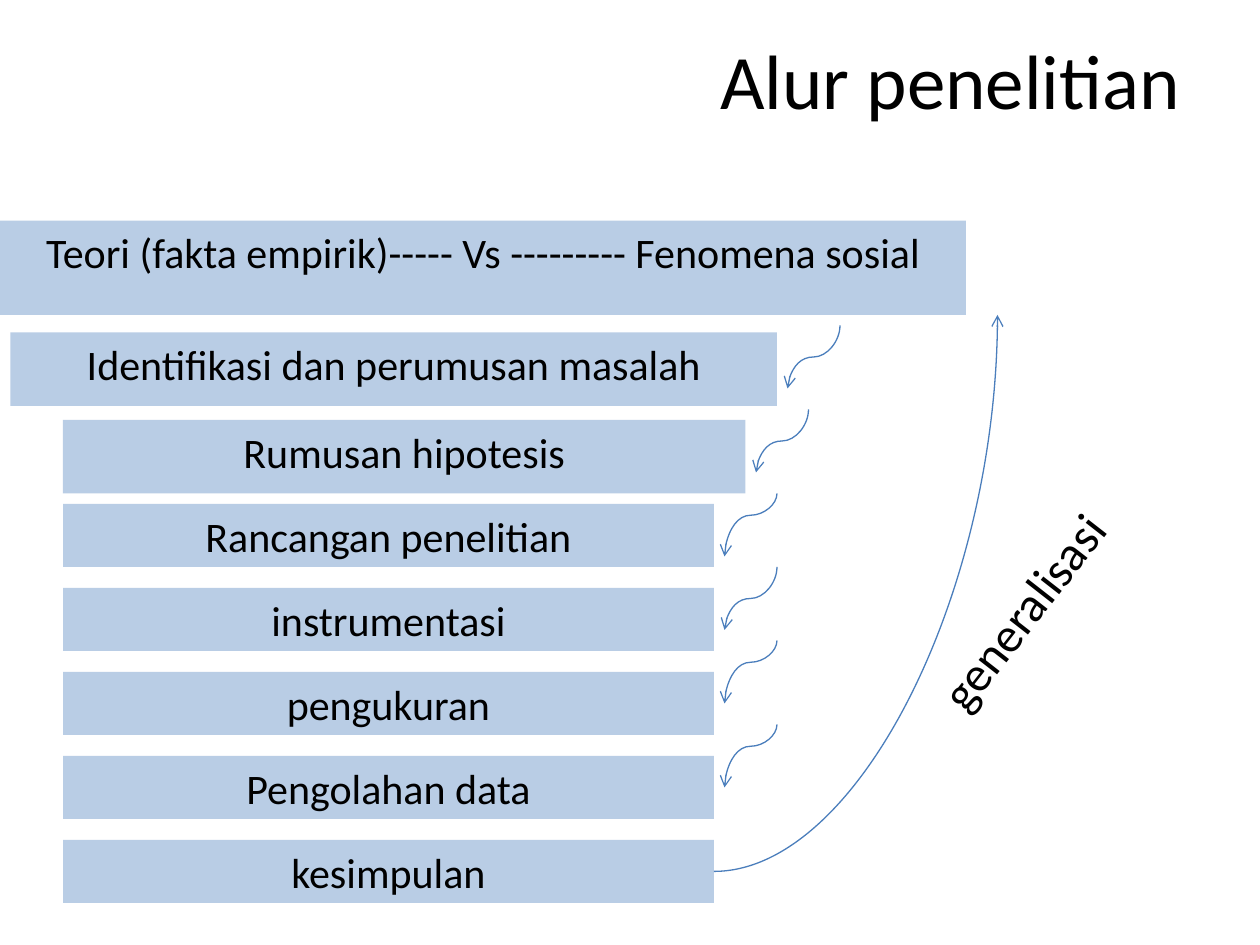
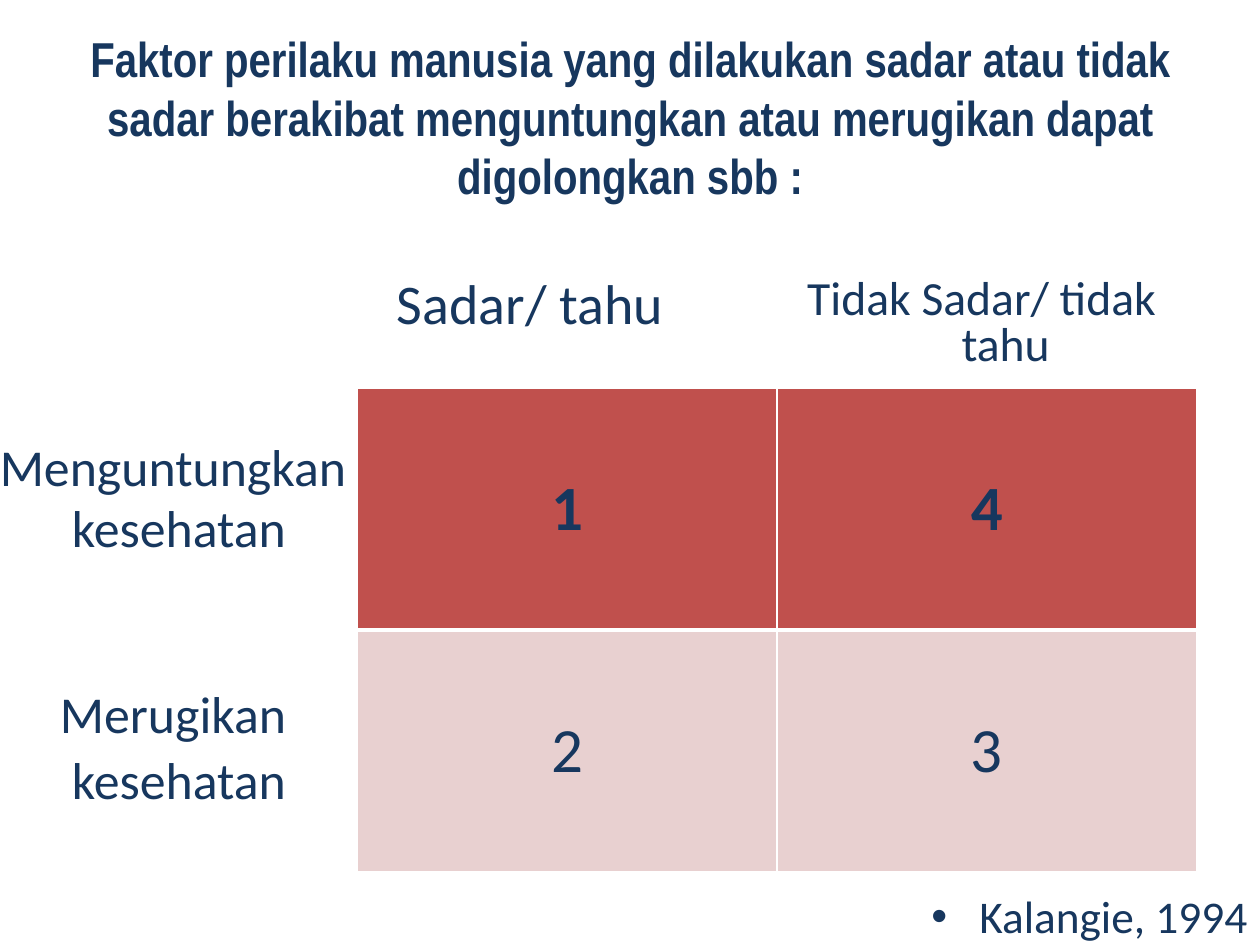
import pptx
import pptx.util
import pptx.dml.color
import pptx.enum.shapes
import pptx.enum.text
import pptx.oxml
from pptx.oxml.ns import qn

WIDE, HIGH = pptx.util.Inches(10), pptx.util.Inches(7.5)
COLS, ROWS = 120, 90
HUES = {
    "ink": "000000",
    "navy": "17375E",
    "pale": "B9CDE5",
    "line": "4B7EBC",
    "red": "C0504D",
    "pink": "E8D0D0",
    "white": "FFFFFF",
}
ALIGN = pptx.enum.text.PP_ALIGN
ANCHOR = pptx.enum.text.MSO_ANCHOR
HANG = pptx.util.Inches(0.38)


def hue(name):
    return pptx.dml.color.RGBColor.from_string(HUES[name])


def span(x, y, w, h):
    return (int(x * WIDE / COLS), int(y * HIGH / ROWS),
            int(w * WIDE / COLS), int(h * HIGH / ROWS))


def inside(box, x, y, w, h):
    return span(box[0] + x, box[1] + y, w, h)


def child(parent, tag, **attrs):
    node = pptx.oxml.xmlchemy.OxmlElement(tag)
    for key, value in attrs.items():
        node.set(key, str(value))
    parent.append(node)
    return node


def style(para, size, color, align=ALIGN.CENTER, font="Calibri", bold=False):
    para.alignment = align
    for run in para.runs:
        run.font.size = pptx.util.Pt(size)
        run.font.name = font
        run.font.bold = bold
        run.font.color.rgb = hue(color)


def write(shape, text, size, color, align=ALIGN.CENTER, lead=None, dot=False):
    frame = shape.text_frame
    frame.word_wrap = True
    frame.vertical_anchor = ANCHOR.TOP
    frame.text = text
    for para in frame.paragraphs:
        style(para, size, color, align)
        para.line_spacing = lead
        props = para._p.get_or_add_pPr()
        props.set("marL", str(HANG))
        props.set("indent", str(-HANG))
        child(child(props, "a:spcBef"), "a:spcPct", val=20000)
        if dot:
            child(props, "a:buFont", typeface="Arial")
            child(props, "a:buChar", char="•")
        else:
            child(props, "a:buNone")


def label(slide, place, text, size, color, **more):
    shape = slide.shapes.add_textbox(*place)
    write(shape, text, size, color, **more)
    return shape


def head(slide, box, text, size, color, **more):
    title = slide.shapes.title
    title.left, title.top, title.width, title.height = span(*box)
    frame = title.text_frame
    frame.text = text
    frame.word_wrap = True
    frame.auto_size = pptx.enum.text.MSO_AUTO_SIZE.NONE
    frame.vertical_anchor = ANCHOR.MIDDLE
    style(frame.paragraphs[0], size, color, **more)


def steps(slide, box):
    wide = [
        (0, 0, 92, 9, "Teori (fakta empirik)----- Vs --------- Fenomena sosial"),
        (1, 10.67, 73, 7, "Identifikasi dan perumusan masalah"),
        (6, 19, 65, 7, "Rumusan hipotesis"),
    ]
    names = ["Rancangan penelitian", "instrumentasi", "pengukuran",
             "Pengolahan data", "kesimpulan"]
    even = [(6, 27 + 8 * i, 62, 6, name) for i, name in enumerate(names)]
    for *place, text in wide + even:
        bar = slide.shapes.add_shape(
            pptx.enum.shapes.MSO_SHAPE.RECTANGLE, *inside(box, *place))
        bar.shadow.inherit = False
        bar.fill.solid()
        bar.fill.fore_color.rgb = hue("pale")
        bar.line.fill.background()
        write(bar, text, 24, "ink")
    return bar


def curve(slide, x, y, w, h):
    left, top, width, height = span(x, y, w, h)
    link = slide.shapes.add_connector(
        pptx.enum.shapes.MSO_CONNECTOR.CURVE,
        left, top, left + width, top + height)
    link.line.color.rgb = hue("line")
    link.line.width = pptx.util.Pt(0.75)
    props = link._element.spPr
    child(props.find(qn("a:ln")), "a:tailEnd", type="arrow")
    child(props, "a:effectLst")
    return link, props


def hops(slide, box):
    wide, high = 5, 6
    spots = [(6, 0, 50000), (3, 8, 50000), (0, 16, 34600),
             (0, 23, 50000), (0, 30, 34600), (0, 38, 34600)]
    for x, y, bend in spots:
        left = box[0] + x + (wide - high) / 2
        top = box[1] + y + (high - wide) / 2
        link, props = curve(slide, left, top, high, wide)
        props.find(qn("a:xfrm")).set("rot", str(90 * 60000))
        shape = props.find(qn("a:prstGeom"))
        child(shape.find(qn("a:avLst")), "a:gd", name="adj1", fmla=f"val {bend}")


def sweep(slide, box, start):
    x, y, w, h = box
    link, props = curve(slide, x, y + h, w, -h)
    props.find(qn("a:prstGeom")).set("prst", "curvedConnector2")
    link.begin_connect(start, 3)
    note = label(slide, inside(box, 11.32, 24.36, 37.8, 9),
                 "generalisasi", 28, "ink")
    note.rotation = 307.9


def edge(cell, sides):
    props = cell._tc.get_or_add_tcPr()
    for side, size in sides.items():
        line = child(props, f"a:ln{side}", w=pptx.util.Pt(size))
        child(child(line, "a:solidFill"), "a:srgbClr", val=HUES["white"])


def grid(slide, box):
    data = [("1", "4"), ("2", "3")]
    table = slide.shapes.add_table(2, 2, *span(*box)).table
    table.first_row = table.horz_banding = False
    for r, row in enumerate(data):
        top = r == 0
        for c, text in enumerate(row):
            cell = table.cell(r, c)
            cell.text = text
            cell.vertical_anchor = ANCHOR.MIDDLE
            style(cell.text_frame.paragraphs[0], 36, "navy", bold=top)
            edge(cell, {"L": 1, "R": 1, "T": 1 if top else 3, "B": 3 if top else 1})
            cell.fill.solid()
            cell.fill.fore_color.rgb = hue("red" if top else "pink")


def names(slide, box):
    items = [
        (-2, -12, 10, "Sadar/ tahu", 32, None),
        (41, -11, 10, "Tidak Sadar/ tidak tahu", 27.2, 0.8),
        (-36, 5, 12, "Menguntungkan\n kesehatan", 29.6, 0.8),
        (-36, 28, 14, "Merugikan\n kesehatan", 29.6, 0.9),
    ]
    for x, y, high, text, size, lead in items:
        label(slide, inside(box, x, y, 37, high), text, size, "navy", lead=lead)


def flow(slide):
    head(slide, (61, 0, 59, 15), "Alur penelitian", 44, "ink")
    last = steps(slide, (0, 21, 92, 65))
    hops(slide, (69, 31, 11, 44))
    sweep(slide, (68, 30, 27, 53), last)


def matrix(slide):
    head(slide, (6, 3.6, 108, 15),
         "Faktor perilaku manusia yang dilakukan sadar atau tidak sadar "
         "berakibat menguntungkan atau merugikan dapat digolongkan sbb :",
         28, "navy", font="Arial Narrow", bold=True)
    label(slide, span(86, 84, 34, 10), "Kalangie, 1994", 25.9, "navy",
          align=ALIGN.RIGHT, dot=True)
    box = (34, 37, 80, 46)
    grid(slide, box)
    names(slide, box)


def main():
    deck = pptx.Presentation()
    deck.slide_width, deck.slide_height = WIDE, HIGH
    for build in (flow, matrix):
        build(deck.slides.add_slide(deck.slide_layouts[5]))
    deck.save("out.pptx")


if __name__ == "__main__":
    main()
